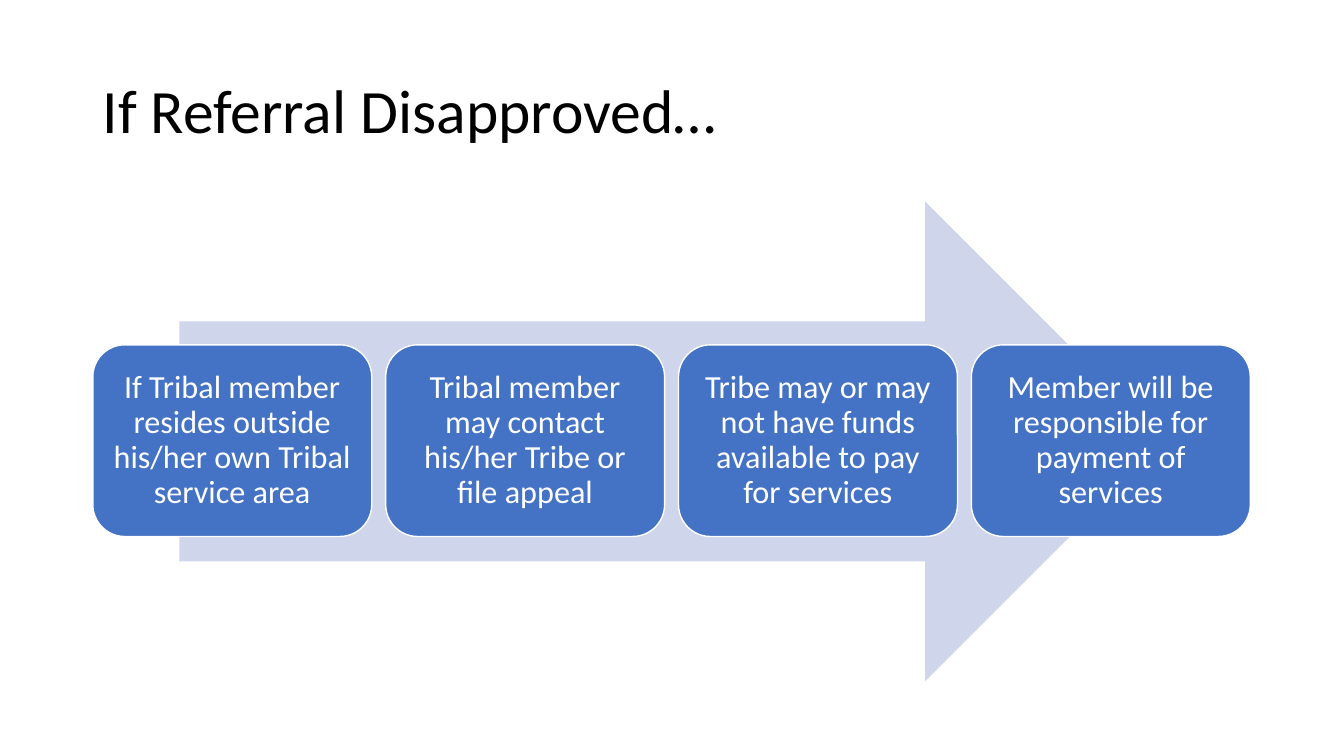
"""Build the slide on what follows a disapproved referral."""
from pptx import Presentation
from pptx.dml.color import RGBColor
from pptx.enum.shapes import MSO_SHAPE as SHAPE
from pptx.enum.text import MSO_ANCHOR as ANCHOR, MSO_AUTO_SIZE as FIT, PP_ALIGN as ALIGN
from pptx.util import Cm, Pt

COLORS = {"text": "000000", "arrow": "CFD5EA", "step": "4472C4", "white": "FFFFFF"}
STEPS = [
    "If Tribal member resides outside his/her own Tribal service area",
    "Tribal member may contact his/her Tribe or file appeal",
    "Tribe may or may not have funds available to pay for services",
    "Member will be responsible for payment of services",
]
LEFT, STEP_W, STEP_H, PITCH = 2.34, 7.03, 4.83, 7.38


def rgb(name):
    return RGBColor.from_string(COLORS[name])


def write(tf, text, size, color, align=ALIGN.LEFT):
    tf.word_wrap = True
    tf.auto_size = FIT.NONE
    tf.vertical_anchor = ANCHOR.MIDDLE
    tf.margin_left = tf.margin_right = Cm(0.25)
    p = tf.paragraphs[0]
    p.alignment = align
    p.line_spacing = 0.9
    r = p.add_run()
    r.text = text
    r.font.name = "Calibri"
    r.font.size = Pt(size)
    r.font.color.rgb = rgb(color)


prs = Presentation()
prs.slide_width, prs.slide_height = Cm(33.87), Cm(19.05)
s = prs.slides.add_slide(prs.slide_layouts[5])

title = s.shapes.title
title.left, title.top, title.width, title.height = Cm(LEFT), Cm(1.02), Cm(29.21), Cm(3.68)
write(title.text_frame, "If Referral Disapproved…", size=44, color="text")

arrow = s.shapes.add_shape(SHAPE.RIGHT_ARROW, Cm(4.52), Cm(5.08), Cm(24.84), Cm(12.09))
arrow.shadow.inherit = False
arrow.fill.solid()
arrow.fill.fore_color.rgb = rgb("arrow")
arrow.line.fill.background()

for i, text in enumerate(STEPS):
    sp = s.shapes.add_shape(SHAPE.ROUNDED_RECTANGLE, Cm(LEFT + i * PITCH), Cm(8.69),
                            Cm(STEP_W), Cm(STEP_H))
    sp.shadow.inherit = False
    sp.fill.solid()
    sp.fill.fore_color.rgb = rgb("step")
    sp.line.color.rgb = rgb("white")
    sp.line.width = Pt(1)
    write(sp.text_frame, text, size=23, color="white", align=ALIGN.CENTER)

prs.save("out.pptx")
